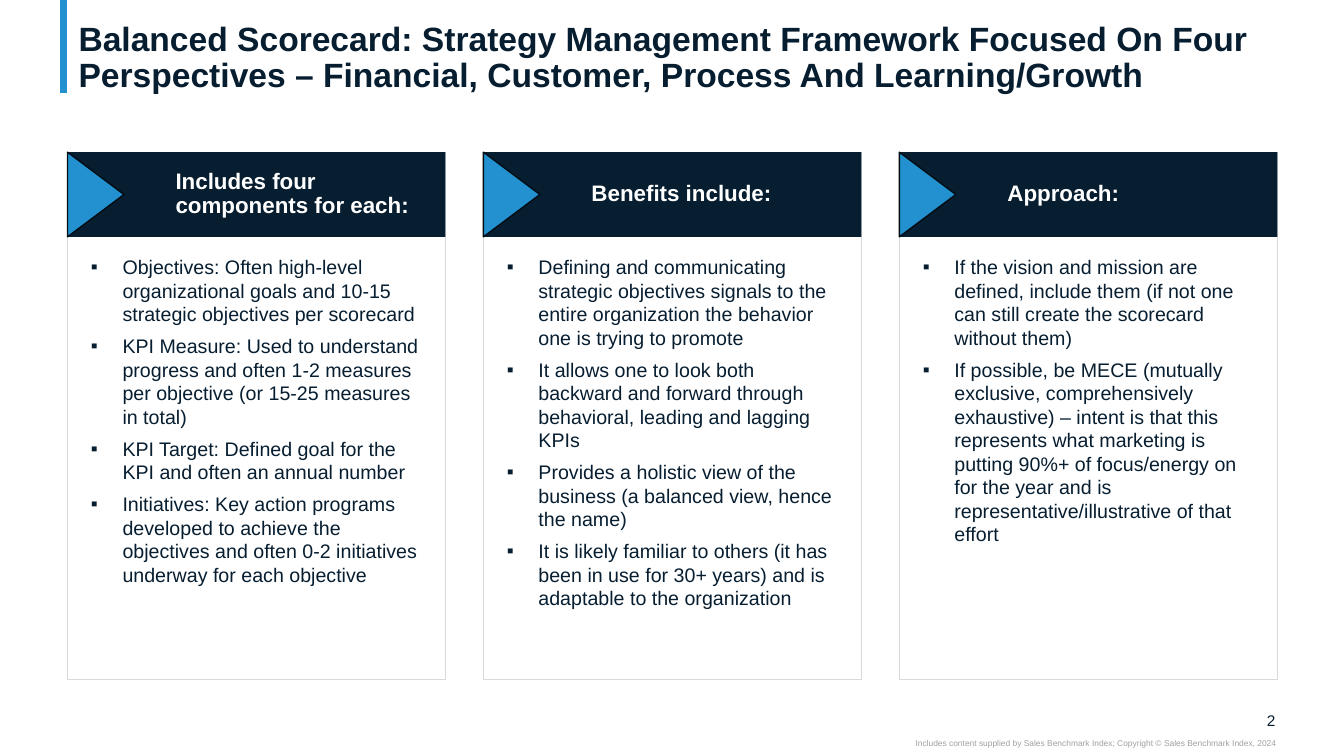
from dataclasses import dataclass

from lxml import etree
from pptx import Presentation
from pptx.dml.color import RGBColor
from pptx.enum import shapes, text
from pptx.oxml import ns
from pptx.util import Pt

NAVY, BLUE, WHITE = "071E31", "2391CF", "FFFFFF"
LEFT, PITCH, WIDTH = 48.2, 297.1, 270
TOP, PANEL_HEIGHT, HEADER_HEIGHT = 108.7, 376.6, 60.5
HEADING_LINE, INDENT = 17.3, 22.5


@dataclass
class Column:
    heading: str
    heading_lines: int
    body_height: float
    bullets: list[str]


@dataclass
class Style:
    size: float
    color: str = NAVY
    bold: bool = False
    align: text.PP_ALIGN = text.PP_ALIGN.LEFT
    anchor: text.MSO_ANCHOR = text.MSO_ANCHOR.TOP
    line_spacing: float = 1.0
    side_inset: float = 0
    bulleted: bool = False


TITLE = Style(24, bold=True, anchor=text.MSO_ANCHOR.BOTTOM, line_spacing=0.9, side_inset=7.2)
HEADING = Style(16, WHITE, True, anchor=text.MSO_ANCHOR.MIDDLE, line_spacing=0.9)
BODY = Style(14, bulleted=True)
PAGE_NUMBER = Style(11, align=text.PP_ALIGN.RIGHT, anchor=text.MSO_ANCHOR.MIDDLE)
COPYRIGHT = Style(6, "A0A0A0", align=text.PP_ALIGN.RIGHT)

COLUMNS = [
    Column("Includes four components for each:", 2, 272.9, [
        "Objectives: Often high-level organizational goals and 10-15 strategic objectives per scorecard",
        "KPI Measure: Used to understand progress and often 1-2 measures per objective (or 15-25 measures in total)",
        "KPI Target: Defined goal for the KPI and often an annual number",
        "Initiatives: Key action programs developed to achieve the objectives and often 0-2 initiatives "
        "underway for each objective",
    ]),
    Column("Benefits include:", 1, 255.6, [
        "Defining and communicating strategic objectives signals to the entire organization the behavior "
        "one is trying to promote",
        "It allows one to look both backward and forward through behavioral, leading and lagging KPIs",
        "Provides a holistic view of the business (a balanced view, hence the name)",
        "It is likely familiar to others (it has been in use for 30+ years) and is adaptable to the organization",
    ]),
    Column("Approach:", 1, 209.5, [
        "If the vision and mission are defined, include them (if not one can still create the scorecard "
        "without them)",
        "If possible, be MECE (mutually exclusive, comprehensively exhaustive) – intent is that this "
        "represents what marketing is putting 90%+ of focus/energy on for the year and is "
        "representative/illustrative of that effort",
    ]),
]


def rgb(color: str) -> RGBColor:
    return RGBColor.from_string(color)


def add_bullet(p) -> None:
    props = p._p.get_or_add_pPr()
    props.set("marL", str(Pt(INDENT)))
    props.set("indent", str(-Pt(INDENT)))
    bullet_color = etree.SubElement(props, ns.qn("a:buClr"))
    etree.SubElement(bullet_color, ns.qn("a:srgbClr"), val=NAVY)
    etree.SubElement(props, ns.qn("a:buFont"), typeface="Arial")
    etree.SubElement(props, ns.qn("a:buChar"), char="▪")


def add_text(s, left: float, top: float, width: float, height: float,
             lines: list[str], style: Style) -> None:
    tf = s.shapes.add_textbox(Pt(left), Pt(top), Pt(width), Pt(height)).text_frame
    tf.word_wrap = True
    tf.vertical_anchor = style.anchor
    tf.margin_left = tf.margin_right = Pt(style.side_inset)
    tf.margin_top = tf.margin_bottom = 0
    tf.text = "\n".join(lines)
    for p in tf.paragraphs:
        p.alignment = style.align
        p.line_spacing = style.line_spacing
        if style.bulleted:
            p.space_after = Pt(6)
            add_bullet(p)
        for r in p.runs:
            r.font.name = "Arial"
            r.font.size = Pt(style.size)
            r.font.bold = style.bold
            r.font.color.rgb = rgb(style.color)


def add_block(s, kind: shapes.MSO_SHAPE, left: float, top: float, width: float, height: float,
              fill: str, line: str = "", weight: float = 0, rotation: float = 0) -> None:
    sp = s.shapes.add_shape(kind, Pt(left), Pt(top), Pt(width), Pt(height))
    sp.shadow.inherit = False
    sp.rotation = rotation
    sp.fill.solid()
    sp.fill.fore_color.rgb = rgb(fill)
    if line:
        sp.line.color.rgb = rgb(line)
        sp.line.width = Pt(weight)
    else:
        sp.line.fill.background()


def add_accent(s) -> None:
    line = s.shapes.add_connector(shapes.MSO_CONNECTOR.STRAIGHT, Pt(45.5), Pt(0), Pt(45.5), Pt(66.4))
    line.line.color.rgb = rgb(BLUE)
    line.line.width = Pt(5)
    etree.SubElement(line._element.spPr, ns.qn("a:effectLst"))


def add_column(s, column: Column, left: float) -> None:
    rectangle = shapes.MSO_SHAPE.RECTANGLE
    add_block(s, rectangle, left, TOP, WIDTH, PANEL_HEIGHT, WHITE, "D9D9D9", 0.5)
    add_text(s, left + 16.8, 182.2, 236.2, column.body_height, column.bullets, BODY)
    add_block(s, rectangle, left, TOP, WIDTH, HEADER_HEIGHT, NAVY)
    heading_height = HEADING_LINE * column.heading_lines
    heading_top = TOP + (HEADER_HEIGHT - heading_height) / 2
    add_text(s, left + 77.2, heading_top, 178.6, heading_height, [column.heading], HEADING)
    depth = HEADER_HEIGHT * 2 / 3
    offset = (HEADER_HEIGHT - depth) / 2
    add_block(s, shapes.MSO_SHAPE.ISOSCELES_TRIANGLE, left - offset, TOP + offset,
              HEADER_HEIGHT, depth, BLUE, "030D15", 1, 90)


def main() -> None:
    prs = Presentation()
    prs.slide_width, prs.slide_height = Pt(960), Pt(540)
    s = prs.slides.add_slide(prs.slide_layouts[6])
    add_accent(s)
    add_text(s, 887, 507.6, 24, 13.4, ["2"], PAGE_NUMBER)
    add_text(s, 540, 527, 371.5, 7.2, [
        "Includes content supplied by Sales Benchmark Index; Copyright © Sales Benchmark Index, 2024"
    ], COPYRIGHT)
    add_text(s, 49, 7.2, 863.3, 60.5, [
        "Balanced Scorecard: Strategy Management Framework Focused On Four Perspectives "
        "– Financial, Customer, Process And Learning/Growth"
    ], TITLE)
    for i, column in enumerate(COLUMNS):
        add_column(s, column, LEFT + i * PITCH)
    prs.save("out.pptx")


if __name__ == "__main__":
    main()
